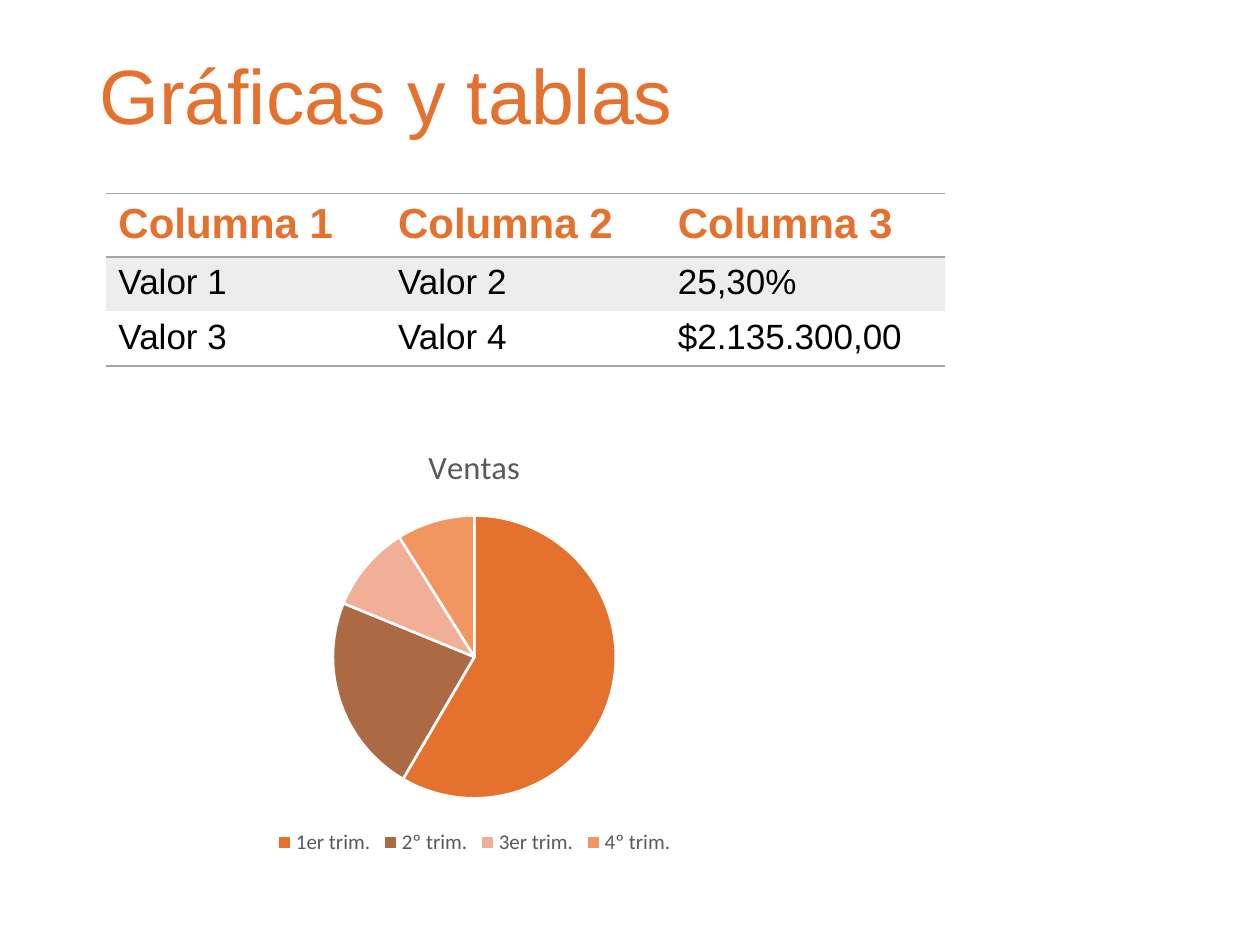
from lxml import etree
from pptx import Presentation
from pptx.chart.data import CategoryChartData
from pptx.dml.color import RGBColor
from pptx.enum.chart import XL_CHART_TYPE, XL_LEGEND_POSITION
from pptx.enum.text import MSO_ANCHOR
from pptx.oxml.ns import qn
from pptx.util import Inches, Pt

PIE = XL_CHART_TYPE.PIE
BOTTOM = XL_LEGEND_POSITION.BOTTOM
MIDDLE = MSO_ANCHOR.MIDDLE

ORANGE = RGBColor(0xE4, 0x71, 0x2D)
BROWN = RGBColor(0xAB, 0x6A, 0x44)
PINK = RGBColor(0xF1, 0xAF, 0x97)
PEACH = RGBColor(0xF2, 0x96, 0x61)
GRAY = RGBColor(0xA5, 0xA5, 0xA5)
BAND = RGBColor(0xED, 0xED, 0xED)
SLATE = RGBColor(0x59, 0x59, 0x59)
BLACK = RGBColor(0, 0, 0)
WHITE = RGBColor(0xFF, 0xFF, 0xFF)

WIDE, HIGH = 10, 7.5
ROWS = [
    ("Columna 1", "Columna 2", "Columna 3"),
    ("Valor 1", "Valor 2", "25,30%"),
    ("Valor 3", "Valor 4", "$2.135.300,00"),
]
SALES = {
    "1er trim.": (59, ORANGE),
    "2º trim.": (23, BROWN),
    "3er trim.": (10, PINK),
    "4º trim.": (9, PEACH),
}


def set_font(font, name, size, color, bold=False):
    font.name = name
    font.size = Pt(size)
    font.bold = bold
    font.color.rgb = color


def add_title(slide, text, box):
    frame = slide.shapes.add_textbox(*map(Inches, box)).text_frame
    frame.word_wrap = True
    frame.vertical_anchor = MIDDLE
    par = frame.paragraphs[0]
    par.text = text
    par.line_spacing = 0.9
    set_font(par.font, "Arial", 44, ORANGE)


def set_edges(cell, ruled):
    props = cell._tc.get_or_add_tcPr()
    for spot, side in enumerate(("L", "R", "T", "B")):
        line = etree.Element(qn(f"a:ln{side}"), w=str(Pt(1)))
        if side in ruled:
            fill = etree.SubElement(line, qn("a:solidFill"))
            etree.SubElement(fill, qn("a:srgbClr"), val=str(GRAY))
        else:
            etree.SubElement(line, qn("a:noFill"))
        props.insert(spot, line)


def fill_cell(cell, text, row):
    head = row == 0
    cell.text = text
    size, color = (24, ORANGE) if head else (20, BLACK)
    set_font(cell.text_frame.paragraphs[0].font, "Arial", size, color, head)
    if row % 2:
        cell.fill.solid()
        cell.fill.fore_color.rgb = BAND
    else:
        cell.fill.background()
    set_edges(cell, {0: "TB", 1: "T", len(ROWS) - 1: "B"}[row])


def add_grid(slide, left, top, col, high):
    count = len(ROWS[0])
    size = map(Inches, (left, top, col * count, high * len(ROWS)))
    table = slide.shapes.add_table(len(ROWS), count, *size).table
    table.first_row = False
    table.horz_banding = False
    for row, texts in enumerate(ROWS):
        for spot, text in enumerate(texts):
            fill_cell(table.cell(row, spot), text, row)


def add_pie(slide, name, box):
    data = CategoryChartData()
    data.categories = list(SALES)
    data.add_series(name, [value for value, _ in SALES.values()])
    chart = slide.shapes.add_chart(PIE, *map(Inches, box), data).chart
    set_font(chart.font, "Calibri", 10, BLACK)
    chart.has_title = True
    title = chart.chart_title
    title.include_in_layout = False
    par = title.text_frame.paragraphs[0]
    par.text = name
    set_font(par.font, "Calibri", 18.6, SLATE)
    chart.has_legend = True
    chart.legend.position = BOTTOM
    chart.legend.include_in_layout = False
    set_font(chart.legend.font, "Calibri", 12, SLATE)
    plot = chart.plots[0]
    plot.vary_by_categories = True
    for spot, (_, color) in enumerate(SALES.values()):
        form = plot.series[0].points[spot].format
        form.fill.solid()
        form.fill.fore_color.rgb = color
        form.line.color.rgb = WHITE
        form.line.width = Pt(1.5)


def main():
    deck = Presentation()
    deck.slide_width, deck.slide_height = Inches(WIDE), Inches(HIGH)
    slide = deck.slides.add_slide(deck.slide_layouts[6])
    add_title(slide, "Gráficas y tablas",
              (0.069 * WIDE, 0.053 * HIGH, 0.862 * WIDE, 0.104 * HIGH))
    add_grid(slide, 0.084 * WIDE, 0.205 * HIGH, 0.222 * WIDE, 0.055 * HIGH)
    add_pie(slide, "Ventas",
            (0.034 * WIDE, 0.447 * HIGH, 0.685 * WIDE, 0.463 * HIGH))
    deck.save("out.pptx")


if __name__ == "__main__":
    main()
